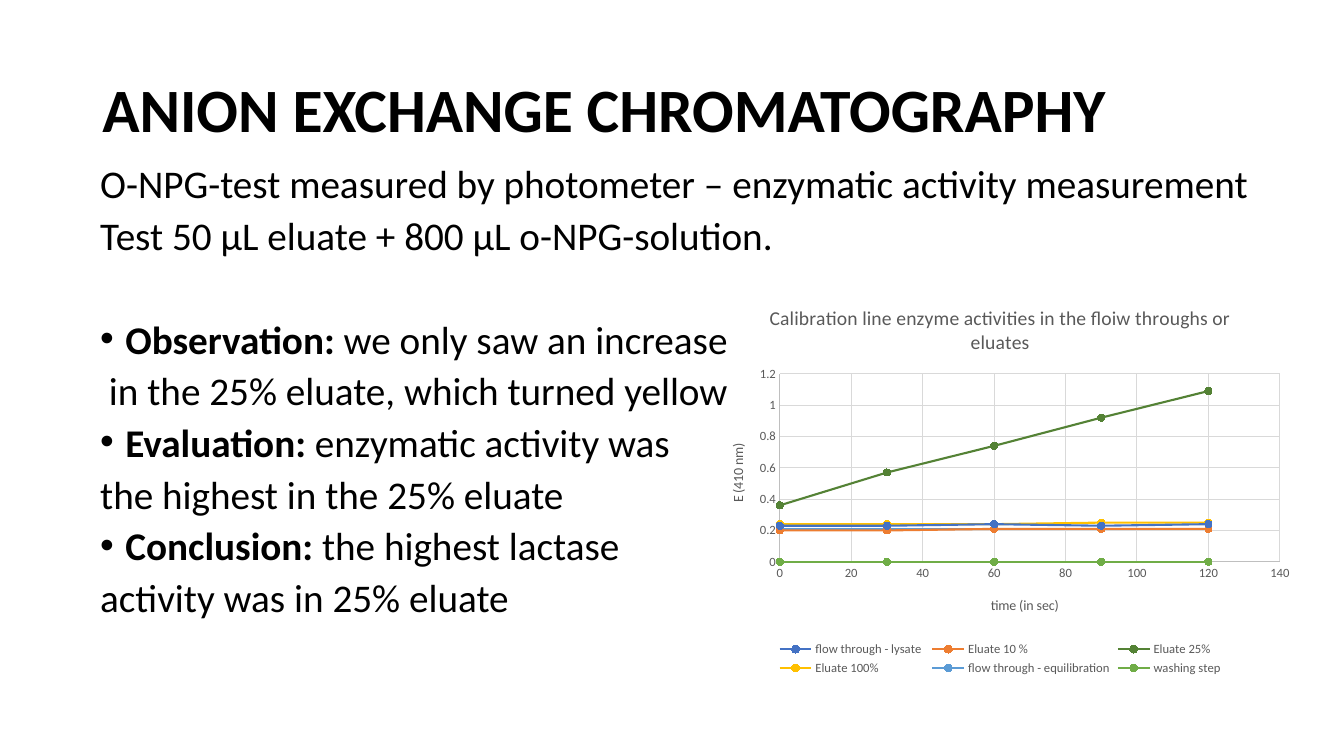
from lxml import etree
from pptx import Presentation
from pptx import chart as _chart
from pptx import util as u
from pptx.chart import data as chart_data
from pptx.dml import color
from pptx.enum import chart as ch, text
from pptx.oxml import ns

PX = 9525
FONT = "Calibri"
COLORS = {"ink": "000000", "label": "595959", "axis": "BFBFBF", "grid": "D9D9D9"}
TIMES = [0, 30, 60, 90, 120]
FRACTIONS = [
    ("flow through - lysate ", [0.23, 0.23, 0.24, 0.23, 0.24], "4472C4", "4472C4"),
    ("Eluate 10 %", [0.2, 0.2, 0.21, 0.21, 0.21], "ED7D31", "ED7D31"),
    ("Eluate 25%", [0.36, 0.57, 0.74, 0.92, 1.09], "548235", "A9D18E"),
    ("Eluate 100%", [0.24, 0.24, 0.24, 0.25, 0.25], "FFC000", "FFC000"),
    ("flow through - equilibration", [0.21] * 5, "5B9BD5", "5B9BD5"),
    ("washing step", [0] * 5, "70AD47", "70AD47"),
]
METHOD = [
    "O-NPG-test measured by photometer – enzymatic activity measurement",
    "Test 50 μL eluate + 800 μL o-NPG-solution.",
]
FINDINGS = [
    ("Observation: ", "we only saw an increase", " in the 25% eluate, which turned yellow"),
    ("Evaluation: ", "enzymatic activity was", "the highest in the 25% eluate"),
    ("Conclusion: ", "the highest lactase", "activity was in 25% eluate"),
]


def rgb(hex_string):
    """Turn a hex string into a colour."""
    return color.RGBColor.from_string(hex_string)


def style(font, size, hex_string, bold=False):
    """Set face, size, colour and weight of a font."""
    font.name, font.size, font.bold = FONT, u.Pt(size), bold
    font.color.rgb = rgb(hex_string)


def add_frame(slide, box):
    """Add a wrapping text box and return its text frame."""
    frame = slide.shapes.add_textbox(*(n * PX for n in box)).text_frame
    frame.word_wrap = True
    return frame


def add_run(paragraph, words, size, bold=False):
    """Append one run in the ink colour."""
    run = paragraph.add_run()
    run.text = words
    style(run.font, size, COLORS["ink"], bold)


def add_bullet(paragraph):
    """Give a paragraph a round bullet with a hanging indent."""
    props = paragraph._p.get_or_add_pPr()
    props.set("marL", str(24 * PX))
    props.set("indent", str(-24 * PX))
    etree.SubElement(props, ns.qn("a:buFont")).set("typeface", "Arial")
    etree.SubElement(props, ns.qn("a:buChar")).set("char", "•")


def build_heading(slide, box):
    """Place the slide heading in its box."""
    frame = add_frame(slide, box)
    frame.vertical_anchor = text.MSO_ANCHOR.MIDDLE
    heading = frame.paragraphs[0]
    heading.line_spacing = 0.9
    add_run(heading, "ANION EXCHANGE CHROMATOGRAPHY", 44, True)


def build_body(slide, box):
    """Place the method lines and the three findings in one box."""
    frame = add_frame(slide, box)
    lines = [[(words, False)] for words in METHOD]
    for label, start, rest in FINDINGS:
        lines += [[(label, True), (start, False)], [(rest, False)]]
    for i, runs in enumerate(lines):
        line = frame.paragraphs[0] if i == 0 else frame.add_paragraph()
        line.line_spacing = 0.8
        if i:
            line.space_before = u.Pt(47 if i == len(METHOD) else 10)
        if len(runs) > 1:
            add_bullet(line)
        for words, bold in runs:
            add_run(line, words, 28, bold)


def set_layout(parent, index, inner=False, **fractions):
    """Fix the place of a chart part as fractions of the chart."""
    for old in parent.findall(ns.qn("c:layout")):
        parent.remove(old)
    layout = etree.Element(ns.qn("c:layout"))
    parent.insert(index, layout)
    manual = etree.SubElement(layout, ns.qn("c:manualLayout"))
    settings = {"layoutTarget": "inner"} if inner else {}
    settings.update(xMode="edge", yMode="edge", **fractions)
    for tag, value in settings.items():
        etree.SubElement(manual, ns.qn("c:" + tag)).set("val", str(value))


def title_part(part, words, size):
    """Write the title of a chart or an axis."""
    part.has_title = True
    heading = (part.chart_title if hasattr(part, "chart_title") else part.axis_title)
    run = heading.text_frame.paragraphs[0].add_run()
    run.text = words
    style(run.font, size, COLORS["label"])
    return heading


def style_axis(axis, words, top, step, x, y):
    """Scale and format one axis and place its title."""
    axis.minimum_scale, axis.maximum_scale, axis.major_unit = 0, top, step
    axis.major_tick_mark = axis.minor_tick_mark = ch.XL_TICK_MARK.NONE
    axis.has_major_gridlines = True
    for line, name in ((axis.format.line, "axis"), (axis.major_gridlines.format.line, "grid")):
        line.color.rgb = rgb(COLORS[name])
        line.width = u.Pt(0.75)
    style(axis.tick_labels.font, 9, COLORS["label"])
    axis.tick_labels.number_format = "General"
    axis.tick_labels.number_format_is_linked = False
    set_layout(title_part(axis, words, 10)._element, 1, x=x, y=y)


def build_activity_chart(slide, box):
    """Place the scatter chart of enzyme activities in its box."""
    data = chart_data.XyChartData()
    for name, readings, _, _ in FRACTIONS:
        fraction = data.add_series(name)
        for time, reading in zip(TIMES, readings):
            fraction.add_data_point(time, reading)
    frame = slide.shapes.add_chart(
        ch.XL_CHART_TYPE.XY_SCATTER_SMOOTH, *(n * PX for n in box), data)
    chart = frame.chart
    style(chart.font, 10, COLORS["ink"])
    title_part(chart, "Calibration line enzyme activities in the floiw throughs or eluates", 14)
    style_axis(chart.category_axis, "time (in sec)", 140, 20, 0.48, 0.78)
    style_axis(chart.value_axis, "E (410 nm)", 1.2, 0.2, 0.04, 0.39)
    plot = chart.plots[0]
    plot.vary_by_categories = False
    for fraction, (_, _, line_color, marker_color) in zip(plot.series, FRACTIONS):
        fraction.smooth = True
        fraction.format.line.color.rgb = rgb(line_color)
        fraction.format.line.width = u.Pt(1.5)
        marker = fraction.marker
        marker.style, marker.size = ch.XL_MARKER_STYLE.CIRCLE, 5
        marker.format.fill.solid()
        marker.format.fill.fore_color.rgb = rgb(marker_color)
        marker.format.line.color.rgb = rgb(line_color)
    chart.has_legend = True
    chart.legend.position = ch.XL_LEGEND_POSITION.BOTTOM
    chart.legend.include_in_layout = False
    style(chart.legend.font, 9, COLORS["label"])
    plot_area = chart._chartSpace.find(".//" + ns.qn("c:plotArea"))
    set_layout(plot_area, 0, True, x=0.13, y=0.22, w=0.84, h=0.48)


def main():
    """Build the chromatography slide and save it."""
    deck = Presentation()
    deck.slide_width, deck.slide_height = 1280 * PX, 720 * PX
    slide = deck.slides.add_slide(deck.slide_layouts[6])
    build_heading(slide, (88, 38, 1104, 139))
    build_body(slide, (86, 156, 1164, 457))
    build_activity_chart(slide, (669, 274, 567, 373))
    deck.save("out.pptx")


if __name__ == "__main__":
    main()
